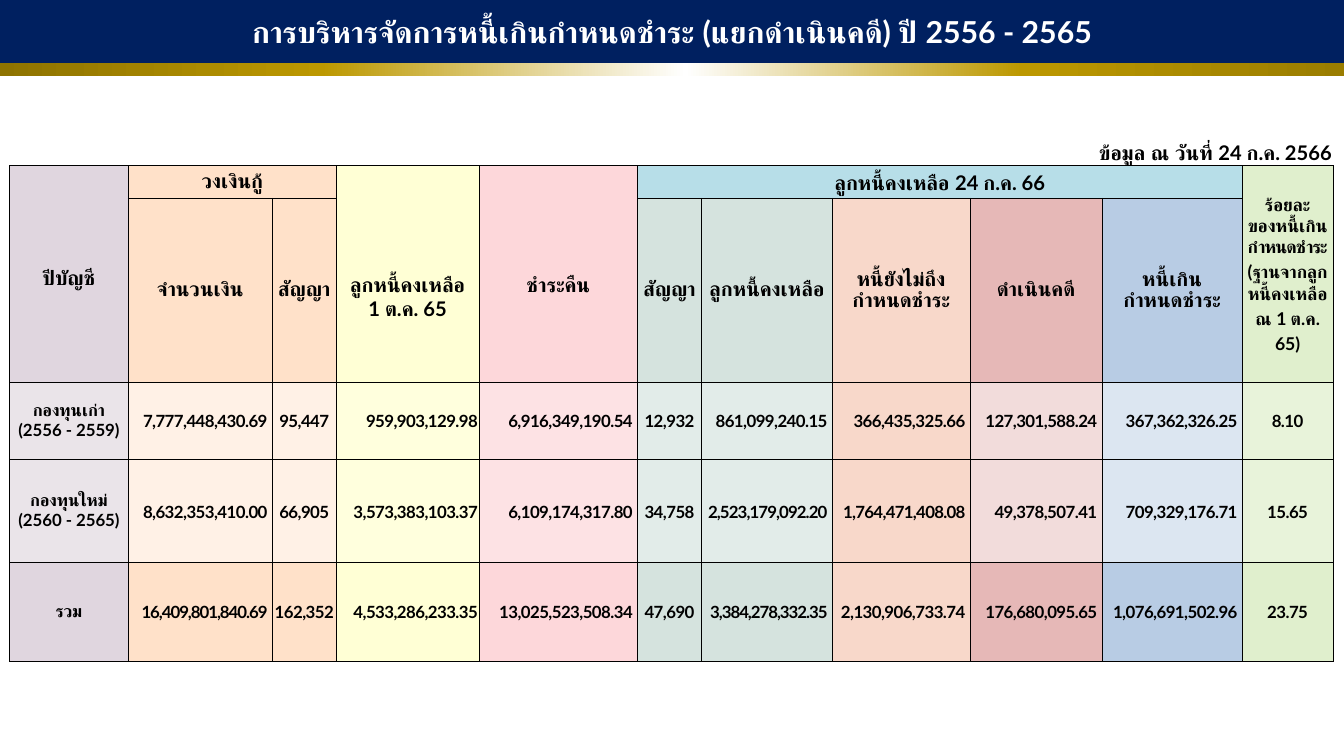
import copy
import lxml.etree
import pptx
import pptx.dml.color
import pptx.enum.shapes
import pptx.enum.text
import pptx.oxml.ns
import pptx.util

Inches, Pt = pptx.util.Inches, pptx.util.Pt
qn = pptx.oxml.ns.qn
PP_ALIGN = pptx.enum.text.PP_ALIGN
MIDDLE = pptx.enum.text.MSO_ANCHOR.MIDDLE

WIDTH, HEIGHT = 11.11, 6.25
TITLE = "การบริหารจัดการหนี้เกินกำหนดชำระ (แยกดำเนินคดี) ปี 2556 - 2565"
GOLD = [(0, "8E7300"), (24, "BC9800"), (51, "FFFFFF"), (76, "BC9800"), (100, "9A7D00")]

ROWS = [
    ["ข้อมูล ณ วันที่ 24 ก.ค. 2566"] + [""] * 10,
    ["ปีบัญชี", "วงเงินกู้", "", "ลูกหนี้คงเหลือ\n1 ต.ค. 65", "ชำระคืน",
     "ลูกหนี้คงเหลือ 24 ก.ค. 66", "", "", "", "",
     "ร้อยละ\nของหนี้เกิน\nกำหนดชำระ\n(ฐานจากลูกหนี้คงเหลือ ณ 1 ต.ค. 65)"],
    ["", "จำนวนเงิน", "สัญญา", "", "", "สัญญา", "ลูกหนี้คงเหลือ",
     "หนี้ยังไม่ถึง\nกำหนดชำระ", "ดำเนินคดี", "หนี้เกิน\nกำหนดชำระ", ""],
    ["กองทุนเก่า\n(2556 - 2559)", "7,777,448,430.69", "95,447", "959,903,129.98",
     "6,916,349,190.54", "12,932", "861,099,240.15", "366,435,325.66",
     "127,301,588.24", "367,362,326.25", "8.10"],
    ["กองทุนใหม่\n(2560 - 2565)", "8,632,353,410.00", "66,905", "3,573,383,103.37",
     "6,109,174,317.80", "34,758", "2,523,179,092.20", "1,764,471,408.08",
     "49,378,507.41", "709,329,176.71", "15.65"],
    ["รวม", "16,409,801,840.69", "162,352", "4,533,286,233.35",
     "13,025,523,508.34", "47,690", "3,384,278,332.35", "2,130,906,733.74",
     "176,680,095.65", "1,076,691,502.96", "23.75"],
]
COL_WIDTHS = [0.98, 1.19, 0.53, 1.18, 1.31, 0.53, 1.08, 1.14, 1.09, 1.16, 0.75]
ROW_HEIGHTS = [0.23, 0.27, 1.52, 0.64, 0.85, 0.82]
MERGES = [(0, 0, 0, 10), (1, 0, 2, 0), (1, 1, 1, 2), (1, 3, 2, 3),
          (1, 4, 2, 4), (1, 5, 1, 9), (1, 10, 2, 10)]
STRONG = ["E0D6DF", "FFE1C9", "FFE1C9", "FFFFD5", "FDD7DA", "D5E3DE",
          "D5E3DE", "F8D8CA", "E6B8B7", "B8CCE4", "E0EFCD"]
LIGHT = ["EAE4E9", "FFF1E6", "FFF1E6", "FFFFDD", "FDE2E4", "E2ECE9",
         "E2ECE9", "F8D8CA", "F2DCDB", "DCE6F1", "E8F3DA"]
GROUP_FILL = "B7DEE8"
CENTRED_COLS = (0, 2, 5, 10)
TIGHT = {(4, 6): -0.5, (4, 7): -0.4, (5, 1): -0.6, (5, 6): -0.6}
LINE_SPACING = {(1, 0): 1.5, (1, 10): 1.2}
TOP_MARGINS = {(1, 3): 0.4, (1, 4): 0.2}


def rgb(value):
    return pptx.dml.color.RGBColor.from_string(value)


def style_run(r, size, color, spacing=0):
    r.font.name, r.font.size, r.font.bold = "Lato", Pt(size), True
    r.font.color.rgb = rgb(color)
    if spacing:
        r._r.get_or_add_rPr().set("spc", str(round(spacing * 100)))


def add_borders(cell, sides):
    tcPr = cell._tc.get_or_add_tcPr()
    for i, side in enumerate(sides):
        ln = lxml.etree.Element(qn("a:ln" + side), w=str(Pt(0.5)))
        fill = lxml.etree.SubElement(ln, qn("a:solidFill"))
        lxml.etree.SubElement(fill, qn("a:srgbClr"), val="000000")
        tcPr.insert(i, ln)


def add_banner(s):
    gold = s.shapes.add_shape(pptx.enum.shapes.MSO_SHAPE.RECTANGLE,
                              0, 0, Inches(WIDTH), Inches(0.63))
    gold.shadow.inherit = False
    gold.line.fill.background()
    gold.fill.gradient()
    gold.fill.gradient_angle = 0
    stops = gold.element.find(".//" + qn("a:gsLst"))
    stops.clear()
    for pos, color in GOLD:
        stop = lxml.etree.SubElement(stops, qn("a:gs"), pos=str(pos * 1000))
        lxml.etree.SubElement(stop, qn("a:srgbClr"), val=color)

    title = s.shapes.title
    title.left, title.top, title.width, title.height = 0, 0, Inches(WIDTH), Inches(0.52)
    title.fill.solid()
    title.fill.fore_color.rgb = rgb("002060")
    tf = title.text_frame
    tf.text = TITLE
    tf.vertical_anchor = MIDDLE
    tf.auto_size = pptx.enum.text.MSO_AUTO_SIZE.NONE
    tf.paragraphs[0].alignment = PP_ALIGN.CENTER
    style_run(tf.paragraphs[0].runs[0], 18, "FFFFFF")
    gold.element.addnext(title.element)


def fill_cell(cell, row, col):
    right = row == 0 or (row > 2 and col not in CENTRED_COLS)
    cell.vertical_anchor = MIDDLE
    cell.margin_left = Inches(0.01)
    cell.margin_right = Inches(0.04 if right and row and col != 3 else 0.01)
    cell.margin_top = Inches(TOP_MARGINS.get((row, col), 0.01))
    cell.margin_bottom = 0
    if row == 0:
        cell.fill.background()
    else:
        cell.fill.solid()
        color = (LIGHT if row in (3, 4) else STRONG)[col]
        if row == 1 and 5 <= col <= 9:
            color = GROUP_FILL
        cell.fill.fore_color.rgb = rgb(color)
    add_borders(cell, "LRTB" if row else "B")

    if not ROWS[row][col]:
        return
    p = cell.text_frame.paragraphs[0]
    p.text = ROWS[row][col]
    p.alignment = PP_ALIGN.RIGHT if right else PP_ALIGN.CENTER
    if (row, col) in LINE_SPACING:
        p.line_spacing = LINE_SPACING[row, col]
    percent_head = (row, col) == (1, 10)
    size = 10.5 if percent_head else 12 if row < 3 else 10
    spacing = TIGHT.get((row, col), -0.3) if row > 2 and col else 0
    for i, r in enumerate(p.runs):
        style_run(r, size, "000000", -0.5 if percent_head and i == 2 else spacing)
    for br in p._p.findall(qn("a:br")):
        br.insert(0, copy.deepcopy(p.runs[0]._r.rPr))


def add_debt_table(s):
    frame = s.shapes.add_table(len(ROWS), len(COL_WIDTHS), Inches(0.08), Inches(1.14),
                               Inches(sum(COL_WIDTHS)), Inches(sum(ROW_HEIGHTS)))
    table = frame.table
    table.first_row = table.horz_banding = False
    for column, width in zip(table.columns, COL_WIDTHS):
        column.width = Inches(width)
    for line, height in zip(table.rows, ROW_HEIGHTS):
        line.height = Inches(height)
    for top, left, bottom, right in MERGES:
        table.cell(top, left).merge(table.cell(bottom, right))
    for row in range(len(ROWS)):
        for col in range(len(COL_WIDTHS)):
            fill_cell(table.cell(row, col), row, col)


def main():
    prs = pptx.Presentation()
    prs.slide_width, prs.slide_height = Inches(WIDTH), Inches(HEIGHT)
    s = prs.slides.add_slide(prs.slide_layouts[5])
    add_debt_table(s)
    add_banner(s)
    prs.save("out.pptx")


if __name__ == "__main__":
    main()
